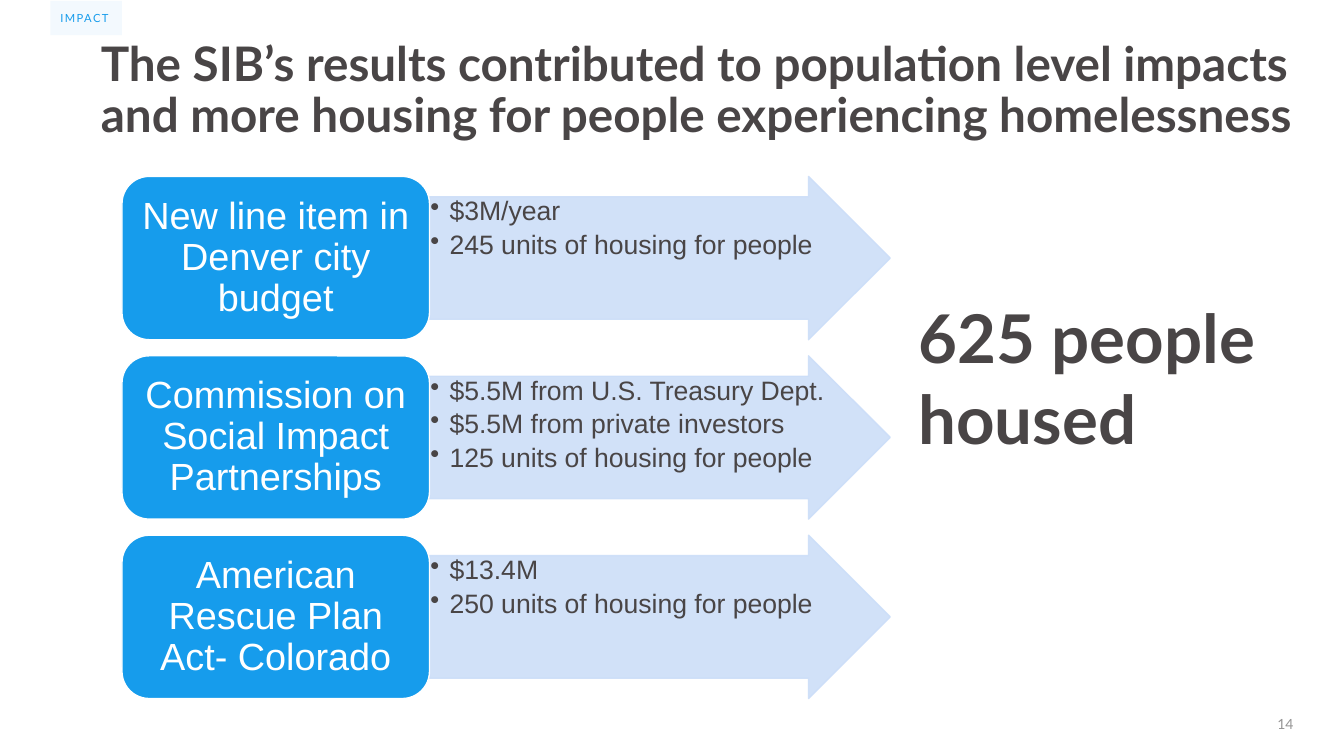
"""Build the slide on the housing impact of the SIB."""
from dataclasses import dataclass

from lxml.etree import SubElement
from pptx import Presentation
from pptx.dml.color import RGBColor
from pptx.enum.shapes import MSO_SHAPE
from pptx.enum.text import MSO_ANCHOR, MSO_AUTO_SIZE, PP_ALIGN
from pptx.oxml.ns import qn
from pptx.util import Inches, Pt


@dataclass(frozen=True)
class Theme:
    """Fonts, colours and type sizes of the slide."""
    heading_font: str = "Lato"
    body_font: str = "Arial"
    ink: str = "494546"
    blue: str = "169CEC"
    pale_blue: str = "CCDEF8"
    grey: str = "959494"
    white: str = "FFFFFF"
    tag_size: int = 8
    number_size: int = 10
    bullet_size: int = 19
    source_size: int = 27
    title_size: int = 34
    total_size: int = 48


THEME = Theme()
FUNDING = [
    ("New line item in Denver city budget",
     ["$3M/year", "245 units of housing for people"]),
    ("Commission on Social Impact Partnerships",
     ["$5.5M from U.S. Treasury Dept.", "$5.5M from private investors",
      "125 units of housing for people"]),
    ("American Rescue Plan Act- Colorado",
     ["$13.4M", "250 units of housing for people"]),
]
FIRST_TOP, ROW_STEP, ROW_HEIGHT = 1.75, 1.78, 1.62
SOURCE_LEFT, SOURCE_WIDTH, ARROW_WIDTH = 1.21, 3.05, 4.57


def add_bullet(para):
    """Give a paragraph a hanging round bullet."""
    properties = para._p.get_or_add_pPr()
    properties.set("marL", str(Inches(0.19)))
    properties.set("indent", str(-Inches(0.19)))
    SubElement(properties, qn("a:buChar")).set("char", "•")


def write_text(shape, lines, size, color, font=THEME.heading_font, bold=False,
               align=PP_ALIGN.LEFT, anchor=MSO_ANCHOR.TOP, margins=(0, 0),
               wrap=True, line_spacing=1.0, space_after=0, bullets=False,
               tracking=0):
    """Write lines as formatted paragraphs into a shape."""
    frame = shape.text_frame
    frame.auto_size = MSO_AUTO_SIZE.NONE
    frame.word_wrap = wrap
    frame.vertical_anchor = anchor
    frame.margin_left = frame.margin_right = Inches(margins[0])
    frame.margin_top = frame.margin_bottom = Inches(margins[1])
    for index, line in enumerate(lines):
        para = frame.add_paragraph() if index else frame.paragraphs[0]
        if bullets:
            add_bullet(para)
        para.alignment = align
        para.line_spacing = line_spacing
        para.space_before = Pt(0)
        para.space_after = Pt(space_after)
        span = para.add_run()
        span.text = line
        span.font.name = font
        span.font.size = Pt(size)
        span.font.bold = bold
        span.font.color.rgb = RGBColor.from_string(color)
        if tracking:
            span.font._element.set("spc", str(tracking * 100))


def paint(color_format, color, opacity):
    """Set a solid colour and its opacity in percent."""
    color_format.fore_color.rgb = RGBColor.from_string(color)
    if opacity < 100:
        swatch = color_format._xPr.find(qn("a:solidFill"))[0]
        SubElement(swatch, qn("a:alpha")).set("val", str(opacity * 1000))


def add_block(page, kind, bounds, fill, line=None, opacity=100):
    """Add a filled preset shape, with an outline if a line colour is given."""
    block = page.shapes.add_shape(kind, *map(Inches, bounds))
    block.shadow.inherit = False
    block.fill.solid()
    paint(block.fill, fill, opacity)
    if line:
        block.line.width = Pt(1)
        block.line.fill.solid()
        paint(block.line.fill, line, opacity)
    else:
        block.line.fill.background()
    return block


def add_label(page, bounds, lines, size, color, **text_format):
    """Add a text box."""
    box = page.shapes.add_textbox(*map(Inches, bounds))
    write_text(box, lines, size, color, **text_format)


def add_title(page, text):
    """Place and write the title placeholder."""
    title = page.shapes.title
    title.left, title.top = Inches(1), Inches(0.35)
    title.width, title.height = Inches(12.33), Inches(1.27)
    write_text(title, [text], THEME.title_size, THEME.ink, bold=True,
               margins=(0, 0.05), line_spacing=0.9)


def add_tag(page, text):
    """Add the section tag at the top edge."""
    tag = add_block(page, MSO_SHAPE.RECTANGLE, (0.5, 0.01, 0.71, 0.34),
                    THEME.blue, opacity=5)
    write_text(tag, [text], THEME.tag_size, THEME.blue, wrap=False,
               anchor=MSO_ANCHOR.MIDDLE, margins=(0.1, 0.1), tracking=1)


def add_funding_row(page, top, source, results):
    """Add a funding source and the arrow that lists its results."""
    arrow = add_block(page, MSO_SHAPE.RIGHT_ARROW,
                      (SOURCE_LEFT + SOURCE_WIDTH, top, ARROW_WIDTH, ROW_HEIGHT),
                      THEME.pale_blue, line=THEME.pale_blue, opacity=90)
    arrow.adjustments[0] = 0.75
    arrow.adjustments[1] = 0.5
    write_text(arrow, results, THEME.bullet_size, THEME.ink,
               font=THEME.body_font, margins=(0.01, 0.01), line_spacing=0.9,
               space_after=3.5, bullets=True)
    card = add_block(page, MSO_SHAPE.ROUNDED_RECTANGLE,
                     (SOURCE_LEFT, top, SOURCE_WIDTH, ROW_HEIGHT),
                     THEME.blue, line=THEME.white)
    write_text(card, [source], THEME.source_size, THEME.white,
               font=THEME.body_font, align=PP_ALIGN.CENTER,
               anchor=MSO_ANCHOR.MIDDLE, margins=(0.11, 0.06),
               line_spacing=0.9)


def main():
    """Build and save the deck."""
    deck = Presentation()
    deck.slide_width, deck.slide_height = Inches(13.33), Inches(7.5)
    page = deck.slides.add_slide(deck.slide_layouts[5])
    add_title(page, "The SIB’s results contributed to population level impacts "
                    "and more housing for people experiencing homelessness")
    add_label(page, (9.83, 7.07, 3, 0.23), ["14"], THEME.number_size,
              THEME.grey, align=PP_ALIGN.RIGHT, anchor=MSO_ANCHOR.MIDDLE)
    add_tag(page, "IMPACT")
    for row, (source, results) in enumerate(FUNDING):
        add_funding_row(page, FIRST_TOP + row * ROW_STEP, source, results)
    add_label(page, (9.01, 2.89, 3.73, 1.72), ["625 people", "housed"],
              THEME.total_size, THEME.ink, bold=True, wrap=False,
              margins=(0.1, 0.05))
    deck.save("out.pptx")


if __name__ == "__main__":
    main()
